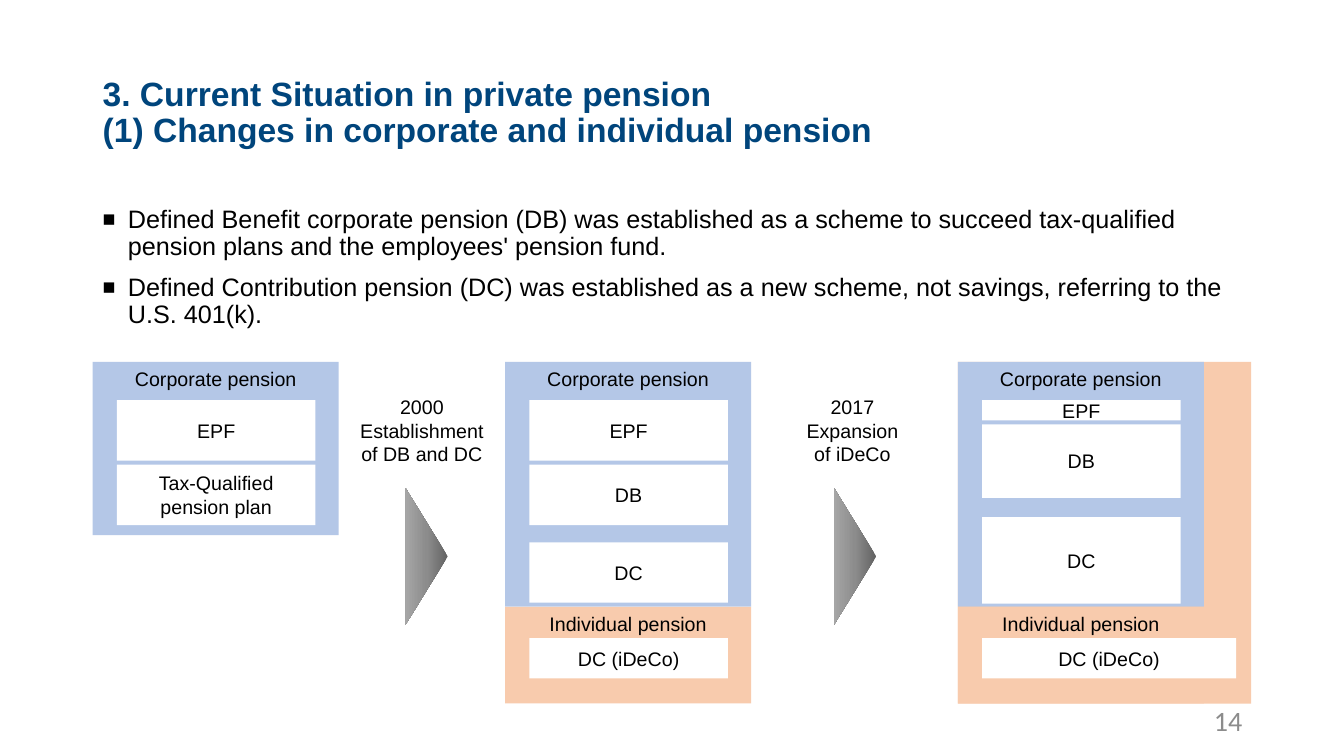
from copy import deepcopy

from lxml import etree
from pptx import Presentation
from pptx.dml.color import RGBColor
from pptx.enum import shapes, text
from pptx.oxml import ns
from pptx.util import Inches, Pt

# Content
TITLE = "3. Current Situation in private pension\v(1) Changes in corporate and individual pension"
BULLETS = [
    "Defined Benefit corporate pension (DB) was established as a scheme to succeed "
    "tax-qualified pension plans and the employees' pension fund.",
    "Defined Contribution pension (DC) was established as a new scheme, not savings, "
    "referring to the U.S. 401(k).",
]
PAGE_NUMBER = "14"

BLUE, ORANGE, WHITE = "B4C7E7", "F8CBAD", "FFFFFF"
BLACK, NAVY, GREY = "000000", "00457C", "8C8C8C"
ARROW_STOPS = [(0, "626262"), (0.5, "8C8C8C"), (1, "A6A6A6")]

# Stages: left edge, corporate height, plans (name, top, height), width of the iDeCo box
STAGES = [
    (0.92, 1.72, [("EPF", 3.97, 0.6), ("Tax-Qualified pension plan", 4.61, 0.6)], None),
    (5.01, 2.43, [("EPF", 3.97, 0.6), ("DB", 4.61, 0.6), ("DC", 5.38, 0.6)], 1.97),
    (9.5, 2.43, [("EPF", 3.97, 0.2), ("DB", 4.21, 0.73), ("DC", 5.13, 0.86)], 2.52),
]
# Transitions: caption left, arrow left, caption lines
TRANSITIONS = [
    (3.2, 3.55, ["2000", "Establishment", "of DB and DC"]),
    (7.47, 7.8, ["2017", "Expansion", "of iDeCo"]),
]
STAGE_TOP, STAGE_WIDTH, STAGE_HEIGHT = 3.59, 2.44, 3.39
INDIVIDUAL_TOP, INDIVIDUAL_HEIGHT = 6.02, 0.96
PLAN_INSET, PLAN_WIDTH = 0.24, 1.97

TOP, MIDDLE = text.MSO_ANCHOR.TOP, text.MSO_ANCHOR.MIDDLE
LEFT, CENTER, RIGHT = text.PP_ALIGN.LEFT, text.PP_ALIGN.CENTER, text.PP_ALIGN.RIGHT


def color(value):
    return RGBColor.from_string(value)


def write(shape, lines, size=14, ink=BLACK, align=CENTER, anchor=MIDDLE, font="Arial", bold=False):
    frame = shape.text_frame
    frame.word_wrap = True
    frame.vertical_anchor = anchor
    for index, line in enumerate(lines):
        paragraph = frame.add_paragraph() if index else frame.paragraphs[0]
        paragraph.text = line
        paragraph.alignment = align
        for run in paragraph.runs:
            run.font.size = Pt(size)
            run.font.name = font
            run.font.bold = bold
            run.font.color.rgb = color(ink)
    return frame.paragraphs


def add_text(slide, box, lines, **style):
    return write(slide.shapes.add_textbox(*map(Inches, box)), lines, **style)


def add_shape(slide, kind, box):
    shape = slide.shapes.add_shape(kind, *map(Inches, box))
    shape.shadow.inherit = False
    shape.line.fill.background()
    return shape


def add_box(slide, box, fill, label=None, anchor=MIDDLE):
    shape = add_shape(slide, shapes.MSO_SHAPE.RECTANGLE, box)
    shape.fill.solid()
    shape.fill.fore_color.rgb = color(fill)
    if label:
        write(shape, [label], anchor=anchor)


def add_bullet(paragraph):
    properties = paragraph._p.get_or_add_pPr()
    properties.set("marL", str(Inches(0.25)))
    properties.set("indent", str(-Inches(0.25)))
    etree.SubElement(properties, ns.qn("a:buSzPct")).set("val", "85000")
    etree.SubElement(properties, ns.qn("a:buFont")).set("typeface", "Arial")
    etree.SubElement(properties, ns.qn("a:buChar")).set("char", "■")


def add_arrow(slide, left):
    arrow = add_shape(slide, shapes.MSO_SHAPE.ISOSCELES_TRIANGLE, (left, 5.31, 1.36, 0.42))
    arrow.rotation = 90
    arrow.fill.gradient()
    stop_list = arrow._element.spPr.find(".//" + ns.qn("a:gsLst"))
    stop_list.insert(1, deepcopy(stop_list[0]))
    for stop, (position, value) in zip(arrow.fill.gradient_stops, ARROW_STOPS):
        stop.position = position
        stop.color.rgb = color(value)
    arrow.fill.gradient_angle = 270


def add_stage(slide, left, corporate_height, plans, ideco_width):
    add_box(slide, (left, STAGE_TOP, STAGE_WIDTH, corporate_height), BLUE, "Corporate pension", TOP)
    plan_left = left + PLAN_INSET
    for name, top, height in plans:
        add_box(slide, (plan_left, top, PLAN_WIDTH, height), WHITE, name)
    if ideco_width:
        add_box(slide, (left, INDIVIDUAL_TOP, STAGE_WIDTH, INDIVIDUAL_HEIGHT), ORANGE,
                "Individual pension", TOP)
        add_box(slide, (plan_left, 6.33, ideco_width, 0.4), WHITE, "DC (iDeCo)")


def main():
    presentation = Presentation()
    presentation.slide_width = Inches(13.33)
    presentation.slide_height = Inches(7.5)
    slide = presentation.slides.add_slide(presentation.slide_layouts[6])

    # Title, bullets and page number
    heading = add_text(slide, (0.92, 0.4, 11.5, 1.45), [TITLE], size=24, ink=NAVY,
                       align=LEFT, bold=True)
    heading[0].line_spacing = 0.9
    bullets = add_text(slide, (0.92, 2, 11.5, 1.37), BULLETS, size=18, align=LEFT, anchor=TOP)
    for index, paragraph in enumerate(bullets):
        add_bullet(paragraph)
        paragraph.line_spacing = 0.9
        paragraph.space_before = Pt(10 if index else 0)
    add_text(slide, (9.42, 6.95, 3, 0.4), [PAGE_NUMBER], size=20, ink=GREY,
             align=RIGHT, font="Calibri")

    # Pension stages, the last one backed by a wider individual pension
    add_box(slide, (STAGES[-1][0], STAGE_TOP, 2.91, STAGE_HEIGHT), ORANGE)
    for stage in STAGES:
        add_stage(slide, *stage)

    # Transitions between stages
    for caption_left, arrow_left, lines in TRANSITIONS:
        add_arrow(slide, arrow_left)
        add_text(slide, (caption_left, 3.97, 1.97, 0.6), lines)

    presentation.save("out.pptx")


if __name__ == "__main__":
    main()
